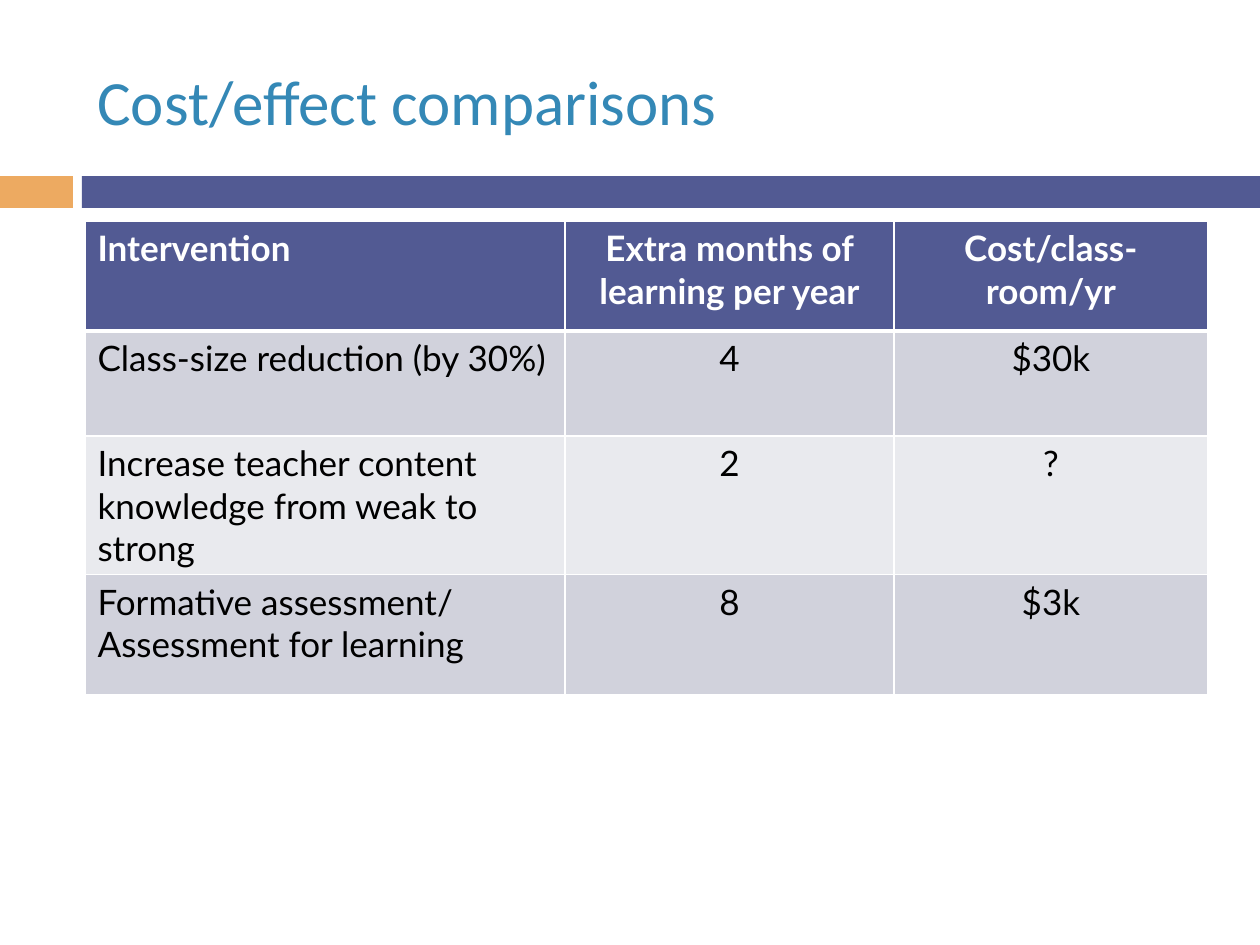
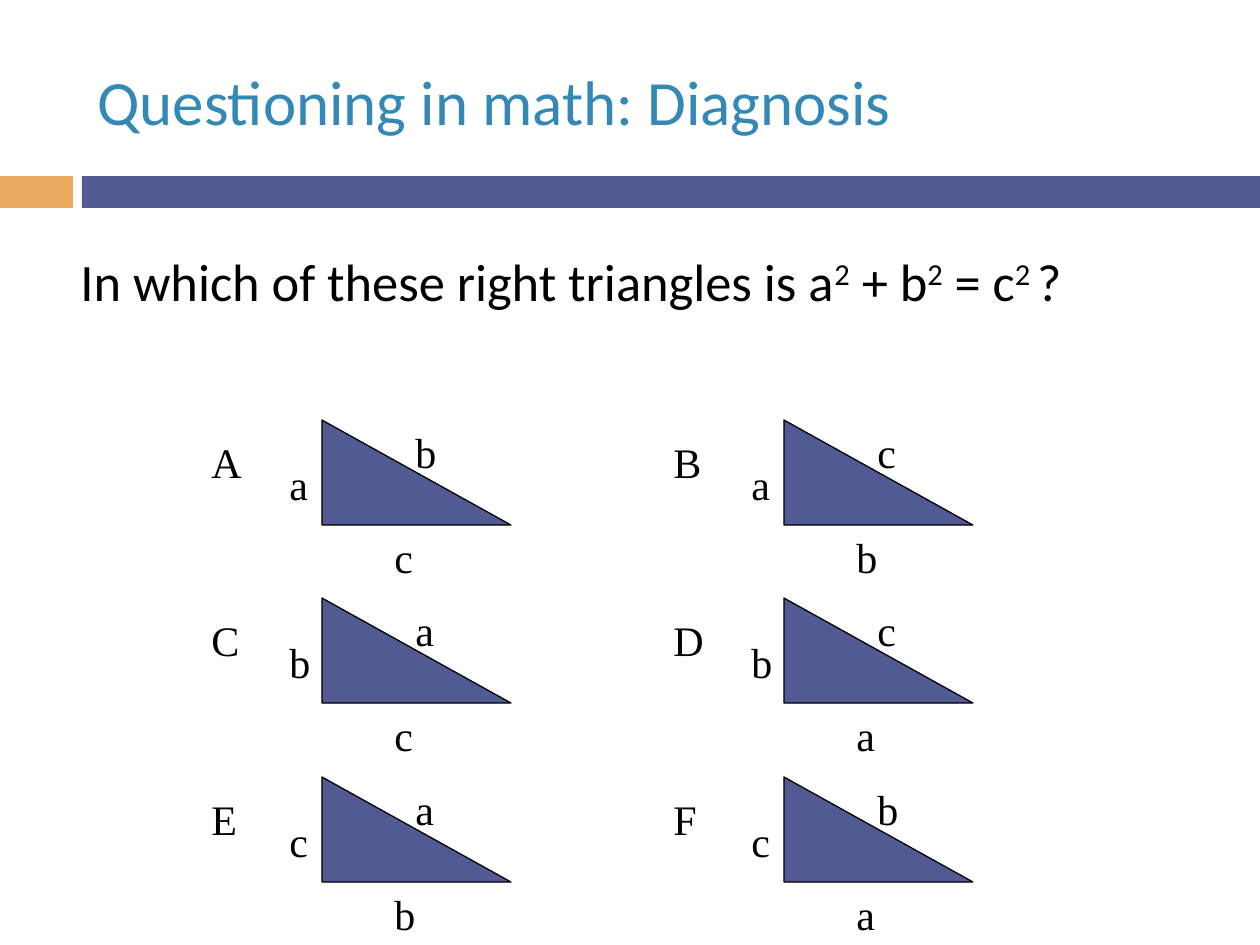
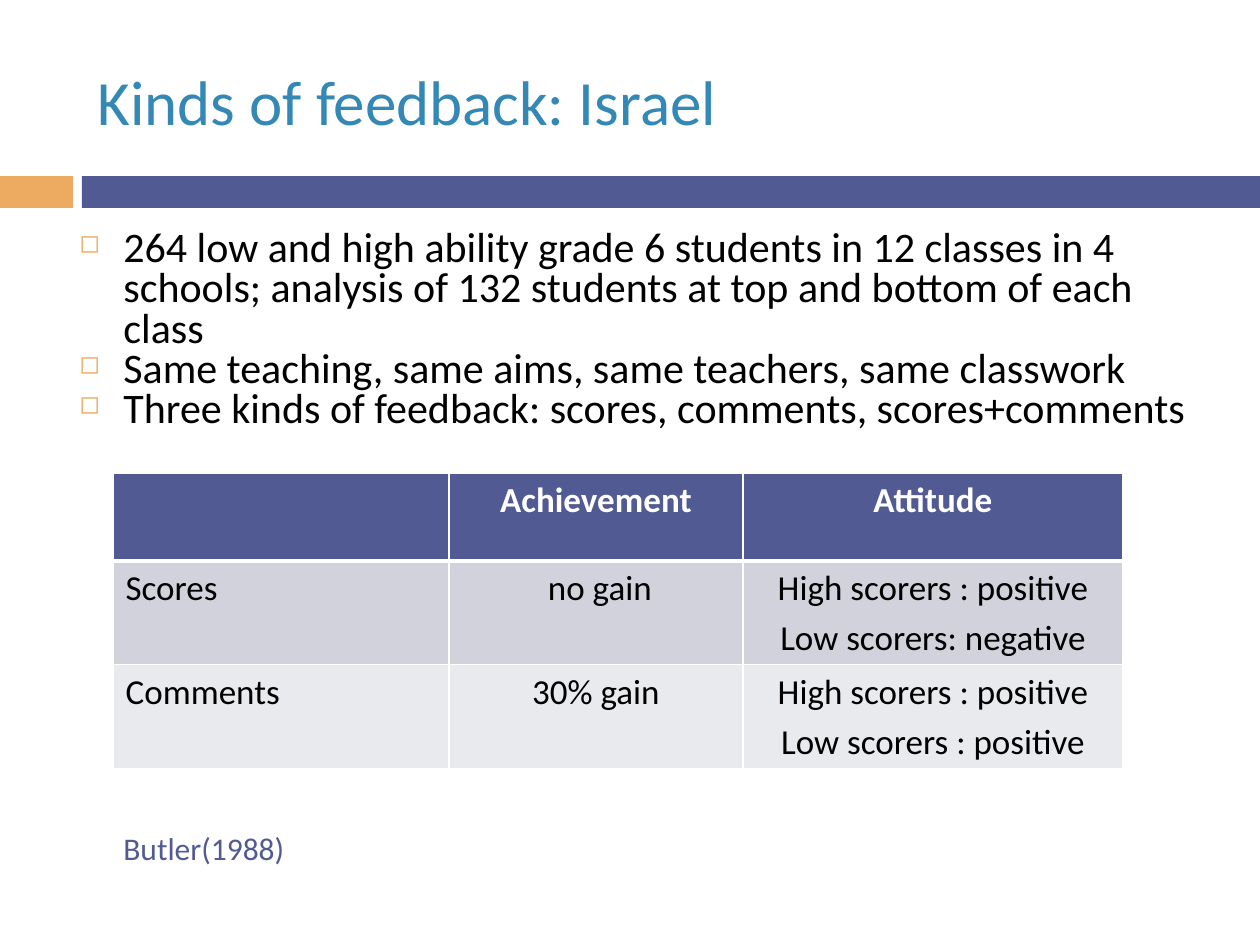
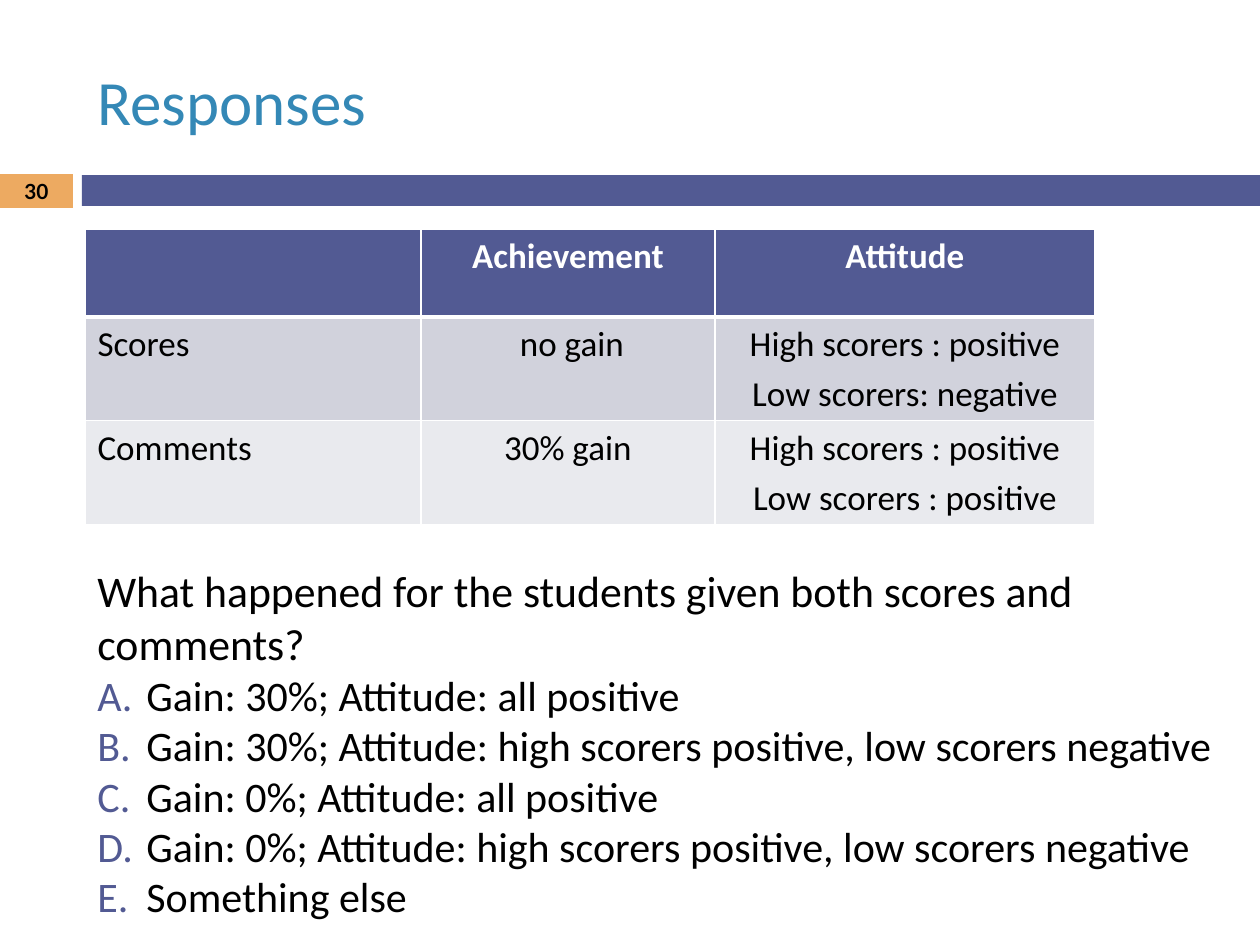
import pptx
import pptx.dml.color
import pptx.enum.shapes
import pptx.enum.text
import pptx.oxml.ns
import pptx.util
import lxml.etree

RGB = pptx.dml.color.RGBColor
SHAPE = pptx.enum.shapes.MSO_SHAPE
ALIGN = pptx.enum.text.PP_ALIGN
ANCHOR = pptx.enum.text.MSO_ANCHOR
qn = pptx.oxml.ns.qn

INDIGO = RGB(0x52, 0x5A, 0x93)
ORANGE = RGB(0xED, 0xAA, 0x61)
TEAL = RGB(0x34, 0x88, 0xB6)
BLACK = RGB(0, 0, 0)
WHITE = RGB(0xFF, 0xFF, 0xFF)
ROW_FILLS = [RGB(0xD1, 0xD2, 0xDC), RGB(0xE9, 0xEA, 0xEE)]

PX_PER_INCH = 126
SLIDE_W, SLIDE_H = 1260, 945
MARGIN = 85

FEEDBACK_COLS = [336, 294, 380]
FEEDBACK_HEIGHTS = [88, 103, 103]
FEEDBACK_ROWS = [
    ["", "Achievement", "Attitude"],
    ["Scores", " no gain", "High scorers : positive\nLow scorers: negative"],
    ["Comments", "30% gain", "High scorers : positive\nLow scorers : positive"],
]


def px(n):
    return pptx.util.Emu(round(n * 914400 / PX_PER_INCH))


def box_emu(box):
    return [px(n) for n in box]


def sub(parent, tag, **attrs):
    el = lxml.etree.SubElement(parent, qn(tag))
    for name, value in attrs.items():
        el.set(name, str(value))
    return el


def add_bullet(p, bullet, color, size):
    pPr = p._p.get_or_add_pPr()
    sub(sub(pPr, "a:buClr"), "a:srgbClr", val=color)
    sub(pPr, "a:buSzPct", val=size * 1000)
    if bullet == "A.":
        sub(pPr, "a:buAutoNum", type="alphaUcPeriod")
    else:
        sub(pPr, "a:buChar", char=bullet)


def write(tf, text, size=24, font="Calibri", color=BLACK, bold=False, align=None,
          indent=0, level=0, line=None, before=0, bullet=None,
          bullet_color=ORANGE, bullet_size=100):
    """Adds one paragraph; in a list of pieces every second one is superscript."""
    p = tf.paragraphs[0]
    if p.runs:
        p = tf.add_paragraph()
    p.alignment = align
    p.level = level
    p.space_before = pptx.util.Pt(before)
    if line:
        p.line_spacing = line
    if indent:
        pPr = p._p.get_or_add_pPr()
        pPr.set("marL", str(px(indent)))
        pPr.set("indent", str(px(-indent)))
    if bullet:
        add_bullet(p, bullet, bullet_color, bullet_size)
    for i, piece in enumerate([text] if isinstance(text, str) else text):
        r = p.add_run()
        r.text = piece
        r.font.size = pptx.util.Pt(size)
        r.font.name = font
        r.font.bold = bold
        r.font.color.rgb = color
        if i % 2:
            r._r.get_or_add_rPr().set("baseline", "30000")


def text_box(shapes, box, text=None, wrap=True, anchor=ANCHOR.TOP, **fmt):
    tf = shapes.add_textbox(*box_emu(box)).text_frame
    tf.word_wrap = wrap
    tf.vertical_anchor = anchor
    if text:
        write(tf, text, **fmt)
    return tf


def add_shape(shapes, kind, box, fill, line=None):
    sp = shapes.add_shape(kind, *box_emu(box))
    sp.shadow.inherit = False
    sp.fill.solid()
    sp.fill.fore_color.rgb = fill
    if line is None:
        sp.line.fill.background()
    else:
        sp.line.color.rgb = line
        sp.line.width = pptx.util.Pt(0.75)
    return sp


def add_band(s, tab, bar):
    add_shape(s.shapes, SHAPE.RECTANGLE, (82, bar[0], SLIDE_W - 82, bar[1]), INDIGO)
    return add_shape(s.shapes, SHAPE.RECTANGLE, (0, tab[0], 73, tab[1]), ORANGE)


def add_slide(prs, title, number=None):
    s = prs.slides.add_slide(prs.slide_layouts[6])
    if number is None:
        add_band(s, tab=(176, 32), bar=(176, 32))
    else:
        tf = add_band(s, tab=(174, 34), bar=(175, 31)).text_frame
        tf.margin_left = tf.margin_right = tf.margin_top = tf.margin_bottom = 0
        tf.vertical_anchor = ANCHOR.MIDDLE
        write(tf, number, size=11.9, font="Lato", bold=True, align=ALIGN.CENTER)
    text_box(s.shapes, (MARGIN, 32, 1123, 136), title, anchor=ANCHOR.MIDDLE,
             size=36, color=TEAL)
    return s


def style_cell(cell, fill, top, bottom):
    tcPr = cell._tc.get_or_add_tcPr()
    for side, width in (("L", 1), ("R", 1), ("T", top), ("B", bottom)):
        ln = sub(tcPr, "a:ln" + side, w=pptx.util.Pt(width))
        sub(sub(ln, "a:solidFill"), "a:srgbClr", val=WHITE)
    cell.fill.solid()
    cell.fill.fore_color.rgb = fill


def add_table(s, left, top, cols, heights, rows, font="Calibri", gap=0):
    box = (left, top, sum(cols), sum(heights))
    table = s.shapes.add_table(len(rows), len(cols), *box_emu(box)).table
    for column, width in zip(table.columns, cols):
        column.width = px(width)
    for i, (row, height) in enumerate(zip(rows, heights)):
        table.rows[i].height = px(height)
        header = i == 0
        fill = INDIGO if header else ROW_FILLS[(i - 1) % 2]
        for j, text in enumerate(row):
            cell = table.cell(i, j)
            style_cell(cell, fill, top=3 if i == 1 else 1, bottom=3 if header else 1)
            for k, line in enumerate(text.split("\n") if text else []):
                write(cell.text_frame, line, size=20, font=font, bold=header,
                      color=WHITE if header else BLACK, before=gap if k else 0,
                      align=ALIGN.CENTER if j else ALIGN.LEFT)


def add_feedback_table(s, left, top):
    add_table(s, left, top, FEEDBACK_COLS, FEEDBACK_HEIGHTS, FEEDBACK_ROWS, gap=4)


def add_triangle(s, left, top, name, sides):
    shapes = s.shapes.add_group_shape().shapes
    add_shape(shapes, SHAPE.RIGHT_TRIANGLE, (left + 123, top, 189, 105), INDIGO, BLACK)
    upright, base, slope = sides
    for text, x, y, w, wrap in (
        (name, 0, 10, 60, True),
        (upright, 78, 32, 73, True),
        (base, 183, 105, 45, False),
        (slope, 204, 0, 45, False),
    ):
        text_box(shapes, (left + x, top + y, w, 63), text, wrap=wrap,
                 font="Times New Roman")


def cost_slide(prs):
    s = add_slide(prs, "Cost/effect comparisons")
    add_table(s, MARGIN, 221, [480, 329, 314], [110, 105, 111, 120], [
        ["Intervention", "Extra months of learning per year", "Cost/class-room/yr"],
        ["Class-size reduction (by 30%)", "4", "$30k"],
        ["Increase teacher content knowledge from weak to strong", "2", "?"],
        ["Formative assessment/\nAssessment for learning", "8", "$3k"],
    ], font="Lato")


def diagnosis_slide(prs):
    s = add_slide(prs, "Questioning in math: Diagnosis")
    text_box(s.shapes, (68, 243, 1192, 77),
             ["In which of these right triangles is a", "2", " + b", "2", " = c", "2 ", "?"],
             size=30, indent=44)
    for i, (name, sides) in enumerate(zip("ABCDEF", ["acb", "abc", "bca", "bac", "cba", "cab"])):
        row, col = divmod(i, 2)
        add_triangle(s, 199 + col * 462, 420 + row * 357 // 2, name, sides)


def feedback_slide(prs):
    s = add_slide(prs, "Kinds of feedback: Israel")
    tf = text_box(s.shapes, (67, 224, 1152, 192))
    for text in (
        "264 low and high ability grade 6 students in 12 classes in 4 schools; "
        "analysis of 132 students at top and bottom of each class",
        "Same teaching, same aims, same teachers, same classwork",
        "Three kinds of feedback: scores, comments, scores+comments",
    ):
        write(tf, text, indent=44, line=0.8, bullet="◻", bullet_size=60)
    text_box(s.shapes, (111, 823, 188, 50), "Butler(1988)", wrap=False,
             size=18, color=INDIGO)
    add_feedback_table(s, 113, 473)


def responses_slide(prs):
    s = add_slide(prs, "Responses", number="30")
    tf = text_box(s.shapes, (MARGIN, 558, SLIDE_W - MARGIN, SLIDE_H - 558),
                  "What happened for the students given both scores and comments?", size=25)
    for text in (
        "Gain: 30%; Attitude: all positive",
        "Gain: 30%; Attitude: high scorers positive, low scorers negative",
        "Gain: 0%; Attitude: all positive",
        "Gain: 0%; Attitude: high scorers positive, low scorers negative",
        "Something else",
    ):
        write(tf, text, level=1, indent=49, bullet="A.", bullet_color=INDIGO)
    add_feedback_table(s, MARGIN, 229)


def main():
    prs = pptx.Presentation()
    prs.slide_width, prs.slide_height = px(SLIDE_W), px(SLIDE_H)
    for build in (cost_slide, diagnosis_slide, feedback_slide, responses_slide):
        build(prs)
    prs.save("out.pptx")


if __name__ == "__main__":
    main()
